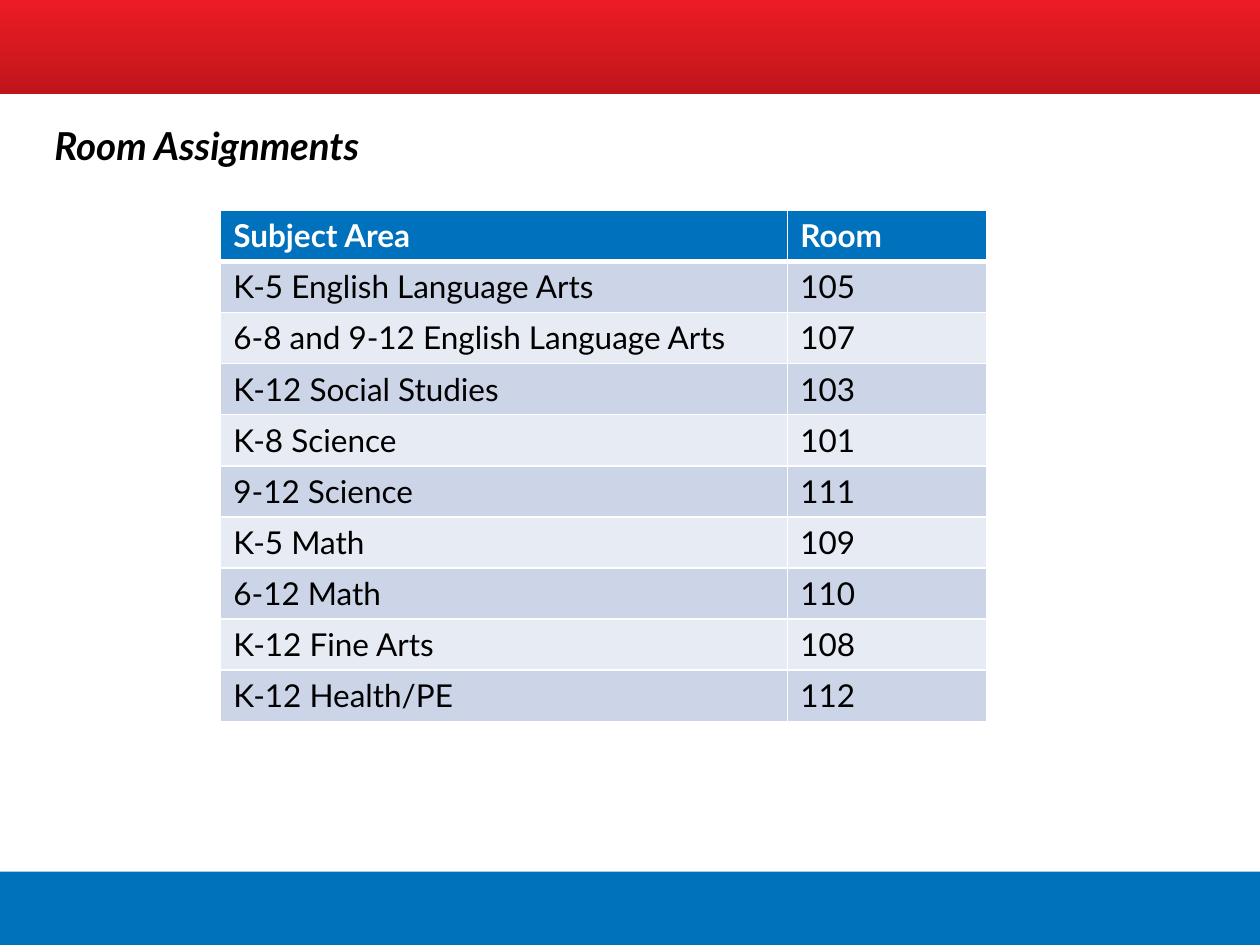
from dataclasses import dataclass

from lxml.etree import SubElement
from pptx import Presentation
from pptx.dml.color import RGBColor as Color
from pptx.enum.shapes import MSO_SHAPE as Preset
from pptx.enum.text import MSO_ANCHOR as Anchor, PP_ALIGN as Align
from pptx.oxml.ns import qn
from pptx.util import Cm, Pt


@dataclass(frozen=True)
class Theme:
    font: str = "Lato"
    title_size: int = 22
    table_size: int = 18
    black: str = "000000"
    white: str = "FFFFFF"
    footer: str = "0072BC"
    red_top: str = "ED1C24"
    red_bottom: str = "BF151B"
    header: str = "0071BC"
    stripes: tuple = ("CCD5E7", "E7EBF3")
    thin: int = 1
    thick: int = 3


THEME = Theme()

ROOMS = [
    ("Subject Area", "Room"),
    ("K-5 English Language Arts", "105"),
    ("6-8 and 9-12 English Language Arts", "107"),
    ("K-12 Social Studies", "103"),
    ("K-8 Science", "101"),
    ("9-12 Science", "111"),
    ("K-5 Math", "109"),
    ("6-12 Math", "110"),
    ("K-12 Fine Arts", "108"),
    ("K-12 Health/PE", "112"),
]


def write_text(frame, text, size, color, bold=False, italic=False):
    para = frame.paragraphs[0]
    para.alignment = Align.LEFT
    span = para.add_run()
    span.text = text
    font = span.font
    font.name, font.size = THEME.font, Pt(size)
    font.bold, font.italic = bold, italic
    font.color.rgb = Color.from_string(color)


def add_band(slide, top, width, height, colors):
    """Full-width bar: one colour is solid, two run from top to bottom."""
    band = slide.shapes.add_shape(Preset.RECTANGLE, 0, top, width, height)
    band.shadow.inherit = False
    band.line.fill.background()
    if len(colors) == 1:
        band.fill.solid()
        band.fill.fore_color.rgb = Color.from_string(colors[0])
        return
    band.fill.gradient()
    band.fill.gradient_angle = 270
    for stop, color in zip(band.fill.gradient_stops, colors):
        stop.color.rgb = Color.from_string(color)


def set_title(slide, text):
    title = slide.shapes.title
    title.left, title.top = Cm(0.84), Cm(2.33)
    title.width, title.height = Cm(18.42), Cm(1.47)
    frame = title.text_frame
    frame.word_wrap = True
    frame.vertical_anchor = Anchor.TOP
    write_text(frame, text, THEME.title_size, THEME.black, bold=True, italic=True)


def set_borders(cell, top, bottom):
    properties = cell._tc.get_or_add_tcPr()
    widths = {"a:lnL": THEME.thin, "a:lnR": THEME.thin, "a:lnT": top, "a:lnB": bottom}
    for tag, width in widths.items():
        line = SubElement(properties, qn(tag), w=str(Pt(width)))
        fill = SubElement(line, qn("a:solidFill"))
        SubElement(fill, qn("a:srgbClr"), val=THEME.white)


def add_room_table(slide, rows, left, top, column_widths, row_height):
    table = slide.shapes.add_table(
        len(rows), len(column_widths), left, top,
        sum(column_widths), row_height * len(rows),
    ).table
    for column, width in zip(table.columns, column_widths):
        column.width = width
    for r, values in enumerate(rows):
        is_header = r == 0
        fill = THEME.header if is_header else THEME.stripes[(r - 1) % 2]
        color = THEME.white if is_header else THEME.black
        # The thick rule lies between the header and the first room
        above = THEME.thick if r == 1 else THEME.thin
        below = THEME.thick if is_header else THEME.thin
        for c, text in enumerate(values):
            cell = table.cell(r, c)
            set_borders(cell, above, below)
            cell.fill.solid()
            cell.fill.fore_color.rgb = Color.from_string(fill)
            write_text(cell.text_frame, text, THEME.table_size, color, bold=is_header)


def main():
    deck = Presentation()
    deck.slide_width, deck.slide_height = Cm(25.4), Cm(19.05)
    slide = deck.slides.add_slide(deck.slide_layouts[5])

    # Bands at the foot and head of the page
    add_band(slide, Cm(17.57), deck.slide_width, Cm(1.7), [THEME.footer])
    add_band(slide, 0, deck.slide_width, Cm(1.9), [THEME.red_top, THEME.red_bottom])

    # Heading and room list
    set_title(slide, "Room Assignments")
    add_room_table(slide, ROOMS, Cm(4.45), Cm(4.24), [Cm(11.43), Cm(4.01)], Cm(1.03))

    deck.save("out.pptx")


if __name__ == "__main__":
    main()
